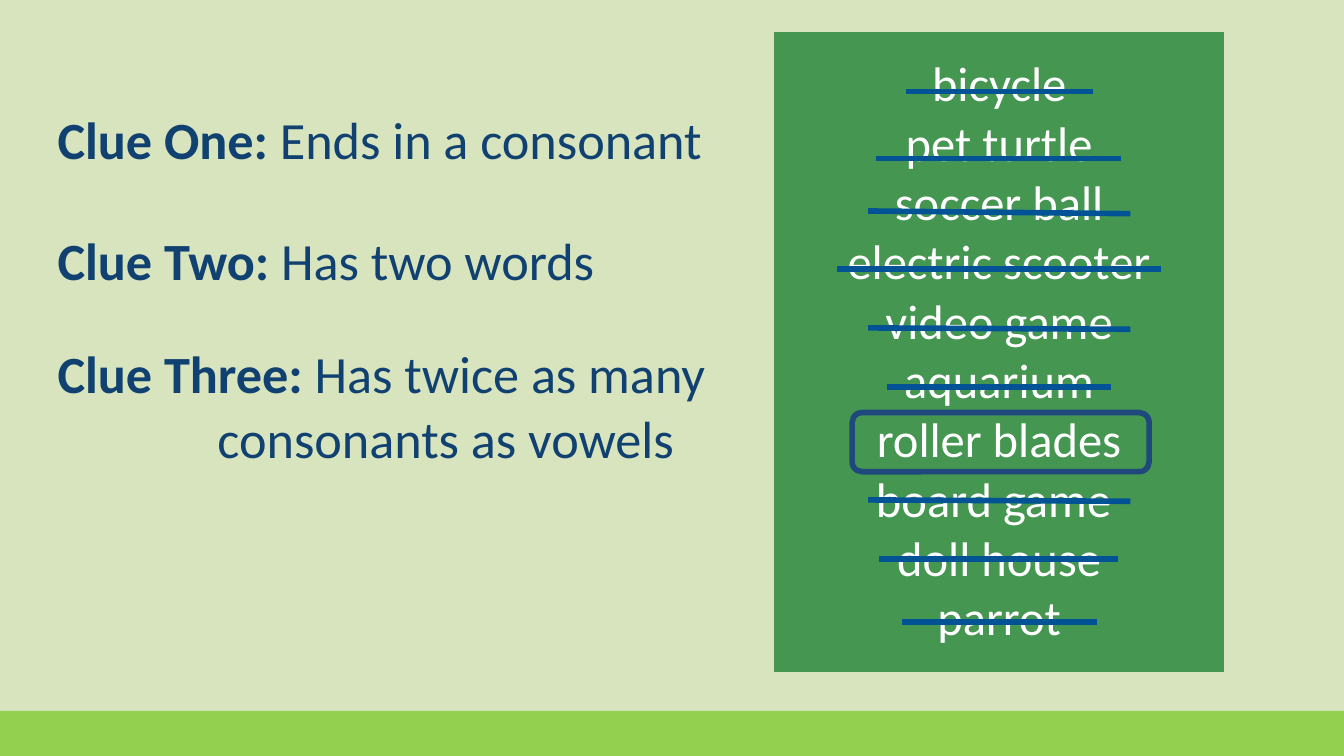
from lxml.etree import SubElement
from pptx import Presentation
from pptx.dml.color import RGBColor
from pptx.enum.shapes import MSO_CONNECTOR, MSO_SHAPE
from pptx.enum.text import MSO_ANCHOR, PP_ALIGN
from pptx.oxml.ns import qn
from pptx.util import Inches, Pt

PALE_GREEN = RGBColor(0xD7, 0xE4, 0xBD)
LIME = RGBColor(0x93, 0xD0, 0x50)
GREEN = RGBColor(0x44, 0x96, 0x51)
WHITE = RGBColor(0xFF, 0xFF, 0xFF)
NAVY = RGBColor(0x10, 0x41, 0x70)
STRIKE_BLUE = RGBColor(0x01, 0x53, 0x95)
ANSWER_BLUE = RGBColor(0x1F, 0x49, 0x7D)

FONT = "Calibri"
SLIDE_WIDTH = 10
SLIDE_HEIGHT = SLIDE_WIDTH * 9 / 16
FOOTER_TOP = 5.29

TOYS = [
    "bicycle", "pet turtle", "soccer ball", "electric scooter", "video game",
    "aquarium", "roller blades", "board game ", "doll house", "parrot",
]

CLUES = [
    ("Clue One: ", "Ends in a consonant", 0.68, 0.84),
    ("Clue Two: ", "Has two words", 1.58, 0.77),
    ("Clue Three: ", "Has twice as many consonants as vowels", 2.42, 1.3),
]

STRIKES = [
    (6.74, 0.68, 8.13, 0.68),
    (6.52, 1.18, 8.34, 1.18),
    (6.46, 1.57, 8.41, 1.59),
    (6.23, 2, 8.64, 2),
    (6.46, 2.44, 8.41, 2.45),
    (6.6, 2.88, 8.27, 2.88),
    (6.46, 3.72, 8.41, 3.73),
    (6.54, 4.16, 8.32, 4.16),
    (6.71, 4.63, 8.16, 4.63),
]


def add_run(paragraph, text, *, size, color, bold=False):
    run = paragraph.add_run()
    run.text = text
    run.font.name = FONT
    run.font.size = Pt(size)
    run.font.bold = bold
    run.font.color.rgb = color


def set_margins(container, margin):
    for side in ("left", "top", "right", "bottom"):
        setattr(container, f"margin_{side}", Inches(margin))


def add_band(slide, top, height, color):
    shape = slide.shapes.add_shape(
        MSO_SHAPE.RECTANGLE, 0, Inches(top), Inches(SLIDE_WIDTH), Inches(height))
    shape.shadow.inherit = False
    shape.fill.solid()
    shape.fill.fore_color.rgb = color
    shape.line.fill.background()


def add_toy_table(slide):
    table = slide.shapes.add_table(
        1, 1, Inches(5.76), Inches(0.24), Inches(3.35), Inches(4.76)).table
    table.first_row = False
    table.horz_banding = False
    cell = table.cell(0, 0)
    set_margins(cell, 0.07)
    cell.vertical_anchor = MSO_ANCHOR.MIDDLE
    properties = cell._tc.get_or_add_tcPr()
    for edge in ("a:lnL", "a:lnR", "a:lnT", "a:lnB"):
        SubElement(SubElement(properties, qn(edge)), qn("a:noFill"))
    cell.fill.solid()
    cell.fill.fore_color.rgb = GREEN
    text_frame = cell.text_frame
    for index, toy in enumerate(TOYS):
        paragraph = text_frame.add_paragraph() if index else text_frame.paragraphs[0]
        paragraph.alignment = PP_ALIGN.CENTER
        add_run(paragraph, toy, size=26, color=WHITE)


def add_clue(slide, label, hint, top, height):
    text_frame = slide.shapes.add_textbox(
        Inches(0.33), Inches(top), Inches(5.17), Inches(height)).text_frame
    text_frame.word_wrap = True
    set_margins(text_frame, 0.1)
    paragraph = text_frame.paragraphs[0]
    paragraph.line_spacing = 1.04
    properties = paragraph._p.get_or_add_pPr()
    properties.set("marL", str(Inches(1.19)))
    properties.set("indent", str(Inches(-1.19)))
    add_run(paragraph, label, size=28, color=NAVY, bold=True)
    add_run(paragraph, hint, size=28, color=NAVY)


def add_strike(slide, *ends):
    connector = slide.shapes.add_connector(MSO_CONNECTOR.STRAIGHT, *map(Inches, ends))
    connector.line.color.rgb = STRIKE_BLUE
    connector.line.width = Pt(3)
    SubElement(connector._element.spPr, qn("a:effectLst"))


def add_answer_frame(slide):
    shape = slide.shapes.add_shape(
        MSO_SHAPE.ROUNDED_RECTANGLE, Inches(6.34), Inches(3.07), Inches(2.21), Inches(0.44))
    shape.shadow.inherit = False
    shape.fill.background()
    shape.line.color.rgb = ANSWER_BLUE
    shape.line.width = Pt(3)


def main():
    presentation = Presentation()
    presentation.slide_width = Inches(SLIDE_WIDTH)
    presentation.slide_height = Inches(SLIDE_HEIGHT)
    slide = presentation.slides.add_slide(presentation.slide_layouts[6])
    add_band(slide, 0, SLIDE_HEIGHT, PALE_GREEN)
    add_band(slide, FOOTER_TOP, SLIDE_HEIGHT - FOOTER_TOP, LIME)
    add_toy_table(slide)
    for clue in CLUES:
        add_clue(slide, *clue)
    for strike in STRIKES:
        add_strike(slide, *strike)
    add_answer_frame(slide)
    presentation.save("out.pptx")


if __name__ == "__main__":
    main()
